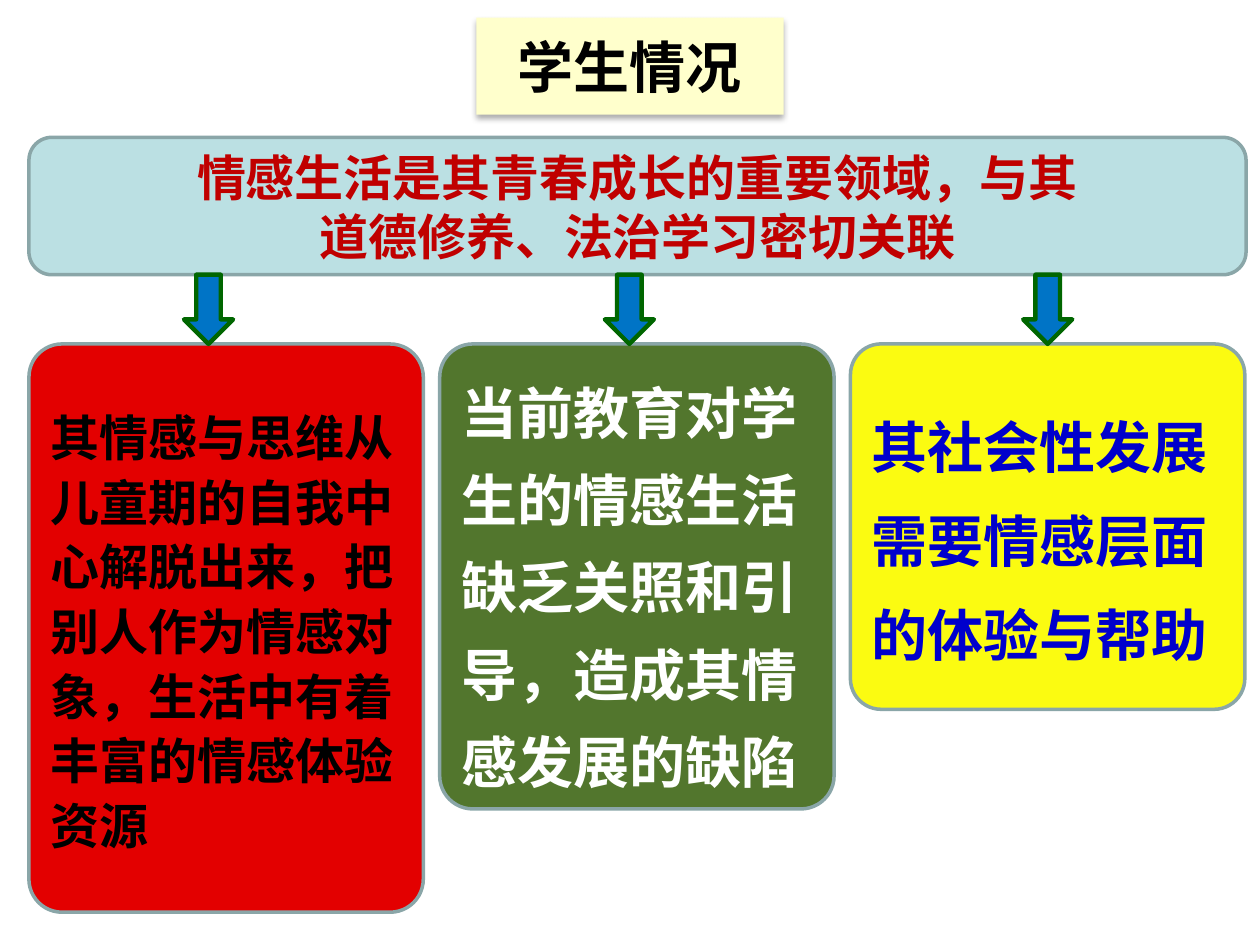
import pptx
import pptx.util
import pptx.dml.color
import pptx.enum.shapes
import pptx.enum.text
import pptx.oxml
import pptx.oxml.ns

Inches = pptx.util.Inches
Pt = pptx.util.Pt
RGBColor = pptx.dml.color.RGBColor
Shape = pptx.enum.shapes.MSO_SHAPE
Align = pptx.enum.text.PP_ALIGN

FONT = "Noto Sans CJK SC"
BLACK = RGBColor(0x00, 0x00, 0x00)
WHITE = RGBColor(0xFF, 0xFF, 0xFF)
CREAM = RGBColor(0xFF, 0xFF, 0xCC)
AQUA = RGBColor(0xBB, 0xE0, 0xE3)
SLATE = RGBColor(0x8A, 0xA6, 0xA8)
WINE = RGBColor(0xC0, 0x00, 0x00)
RED = RGBColor(0xE3, 0x00, 0x00)
GREEN = RGBColor(0x52, 0x76, 0x2D)
YELLOW = RGBColor(0xFB, 0xFB, 0x11)
NAVY = RGBColor(0x00, 0x00, 0xCC)
BLUE = RGBColor(0x00, 0x74, 0xC6)
FOREST = RGBColor(0x00, 0x66, 0x00)

TITLE = "学生情况"
CLAIM = "情感生活是其青春成长的重要领域，与其\n道德修养、法治学习密切关联"
CARDS = [
    ("其情感与思维从儿童期的自我中心解脱出来，把别人作为情感对象，生活中有着丰富的情感体验资源",
     4.51, RED, BLACK, 28, 1.1),
    ("当前教育对学生的情感生活缺乏关照和引导，造成其情感发展的缺陷",
     3.69, GREEN, WHITE, 32, 1.3),
    ("其社会性发展需要情感层面的体验与帮助",
     2.9, YELLOW, NAVY, 32, 1.4),
]
ARROWS = [1.46, 4.8, 8.12]

LEFT, TOP, WIDTH, PITCH = 0.23, 2.73, 3.13, 3.26

SHADOW = (
    '<a:effectLst %s><a:outerShdw blurRad="44450" dist="27940" dir="5400000" '
    'algn="ctr" rotWithShape="0"><a:srgbClr val="000000"><a:alpha val="32000"/>'
    '</a:srgbClr></a:outerShdw></a:effectLst>' % pptx.oxml.ns.nsdecls("a")
)


def write(shape, text, size, color, align, space=1.0):
    frame = shape.text_frame
    frame.text = text
    frame.word_wrap = True
    frame.auto_size = pptx.enum.text.MSO_AUTO_SIZE.NONE
    frame.vertical_anchor = pptx.enum.text.MSO_ANCHOR.MIDDLE
    for para in frame.paragraphs:
        para.alignment = align
        para.line_spacing = space
        for run in para.runs:
            font = run.font
            font.size = Pt(size)
            font.bold = True
            font.color.rgb = color
            font.name = FONT
            east = pptx.oxml.parse_xml(
                '<a:ea %s typeface="%s"/>' % (pptx.oxml.ns.nsdecls("a"), FONT))
            font._element.append(east)


def draw(slide, kind, box, fill, line, weight):
    shape = slide.shapes.add_shape(kind, *map(Inches, box))
    shape.shadow.inherit = False
    shape.fill.solid()
    shape.fill.fore_color.rgb = fill
    shape.line.color.rgb = line
    shape.line.width = Pt(weight)
    return shape


def main():
    deck = pptx.Presentation()
    deck.slide_width, deck.slide_height = Inches(10), Inches(7.5)
    slide = deck.slides.add_slide(deck.slide_layouts[5])

    title = slide.shapes.title
    title.left, title.top = Inches(3.78), Inches(0.14)
    title.width, title.height = Inches(2.44), Inches(0.77)
    title.fill.solid()
    title.fill.fore_color.rgb = CREAM
    title._element.spPr.append(pptx.oxml.parse_xml(SHADOW))
    write(title, TITLE, 32, BLACK, Align.CENTER)

    bar = draw(slide, Shape.ROUNDED_RECTANGLE, (LEFT, 1.09, 9.66, 1.09), AQUA, SLATE, 2)
    write(bar, CLAIM, 28, WINE, Align.CENTER)

    for col, (text, height, fill, color, size, space) in enumerate(CARDS):
        box = (LEFT + col * PITCH, TOP, WIDTH, height)
        card = draw(slide, Shape.ROUNDED_RECTANGLE, box, fill, SLATE, 2)
        card.adjustments[0] = 0.084
        write(card, text, size, color, Align.LEFT, space)

    for left in ARROWS:
        draw(slide, Shape.DOWN_ARROW, (left, 2.18, 0.39, 0.55), BLUE, FOREST, 2.5)

    deck.save("out.pptx")


if __name__ == "__main__":
    main()
